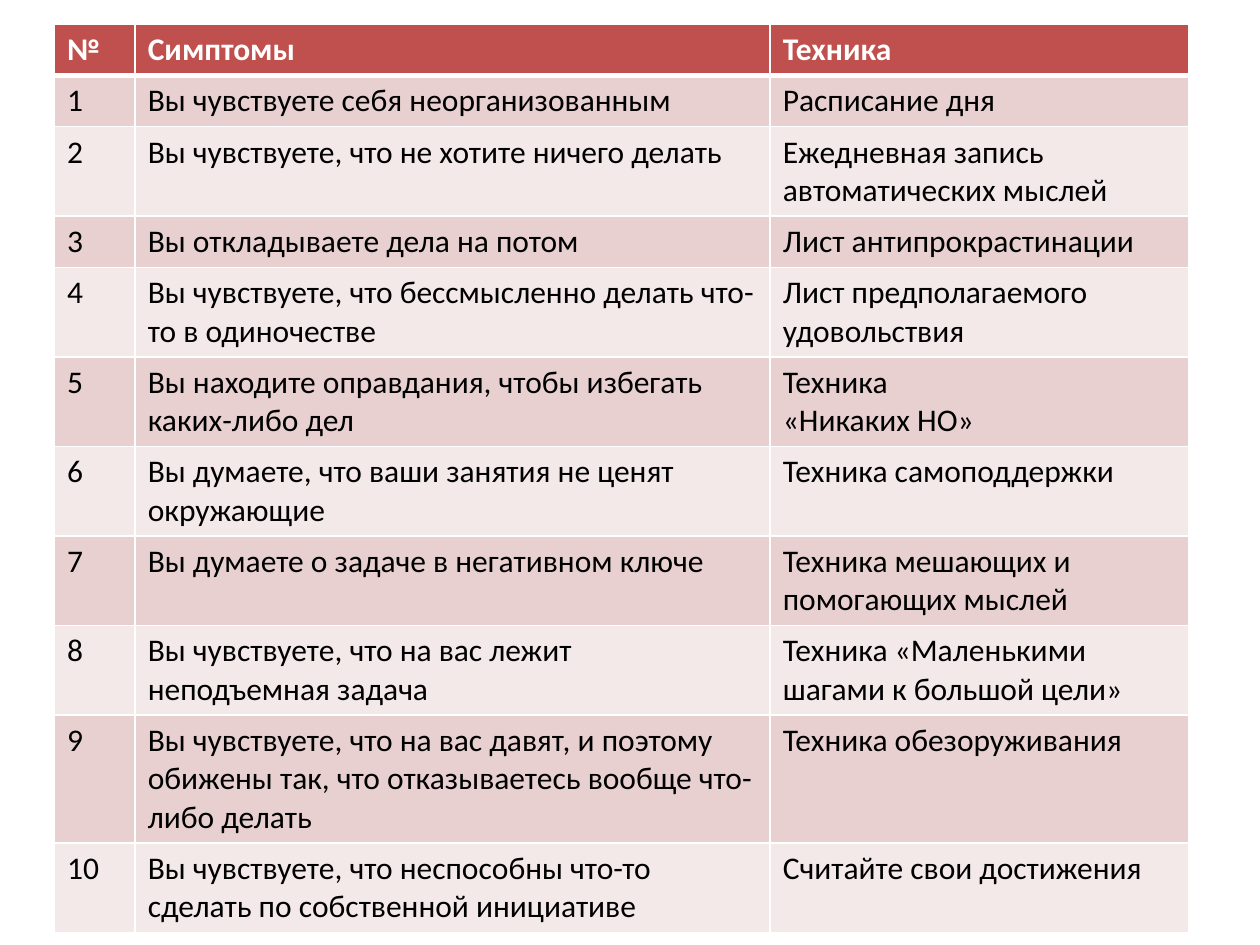
from lxml import etree
from pptx import Presentation
from pptx.dml.color import RGBColor
from pptx.oxml.ns import qn
from pptx.util import Pt

FONT = "Calibri"
FONT_SIZE = 18
WHITE, BLACK = "FFFFFF", "000000"
HEADER_FILL = "C0504D"
BAND_FILLS = ("F4E9E9", "E8D0D0")  # even rows, odd rows
THIN, THICK = 1, 3
COLUMN_WIDTHS = (46.08, 362.88, 239.04)
ROW_HEIGHT = 29.2

HEADINGS = ("№", "Симптомы", "Техника")
SYMPTOMS = [
    ("Вы чувствуете себя неорганизованным", "Расписание дня"),
    ("Вы чувствуете, что не хотите ничего делать",
     "Ежедневная запись автоматических мыслей"),
    ("Вы откладываете дела на потом", "Лист антипрокрастинации"),
    ("Вы чувствуете, что бессмысленно делать что-то в одиночестве",
     "Лист предполагаемого удовольствия"),
    ("Вы находите оправдания, чтобы избегать каких-либо дел",
     "Техника\n«Никаких НО»"),
    ("Вы думаете, что ваши занятия не ценят окружающие",
     "Техника самоподдержки"),
    ("Вы думаете о задаче в негативном ключе",
     "Техника мешающих и помогающих мыслей"),
    ("Вы чувствуете, что на вас лежит неподъемная задача",
     "Техника «Маленькими шагами к большой цели»"),
    ("Вы чувствуете, что на вас давят, и поэтому обижены так, "
     "что отказываетесь вообще что-либо делать",
     "Техника обезоруживания"),
    ("Вы чувствуете, что неспособны что-то сделать по собственной инициативе",
     "Считайте свои достижения"),
]


def color(hex_value):
    return RGBColor.from_string(hex_value)


def add_borders(cell, top, bottom):
    properties = cell._tc.get_or_add_tcPr()
    for side, width in (("L", THIN), ("R", THIN), ("T", top), ("B", bottom)):
        line = etree.SubElement(properties, qn(f"a:ln{side}"), w=str(Pt(width)))
        fill = etree.SubElement(line, qn("a:solidFill"))
        etree.SubElement(fill, qn("a:srgbClr"), val=WHITE)


def format_cell(cell, text, row_number):
    is_header = row_number == 0
    # Borders go before the fill in the cell properties
    add_borders(cell,
                top=THICK if row_number == 1 else THIN,
                bottom=THICK if is_header else THIN)
    cell.fill.solid()
    cell.fill.fore_color.rgb = color(
        HEADER_FILL if is_header else BAND_FILLS[row_number % 2])

    cell.text_frame.text = text
    for paragraph in cell.text_frame.paragraphs:
        for run in paragraph.runs:
            run.font.name = FONT
            run.font.size = Pt(FONT_SIZE)
            run.font.bold = is_header
            run.font.color.rgb = color(WHITE if is_header else BLACK)


def add_technique_table(slide, left, top, width, height):
    rows = [HEADINGS] + [(str(number), symptom, technique)
                         for number, (symptom, technique) in enumerate(SYMPTOMS, 1)]
    frame = slide.shapes.add_table(len(rows), len(HEADINGS),
                                   Pt(left), Pt(top), Pt(width), Pt(height))
    table = frame.table
    for column, column_width in zip(table.columns, COLUMN_WIDTHS):
        column.width = Pt(column_width)
    for row_number, texts in enumerate(rows):
        table.rows[row_number].height = Pt(ROW_HEIGHT)
        for column_number, text in enumerate(texts):
            format_cell(table.cell(row_number, column_number), text, row_number)
    # Rows grow with their text to fill this height
    frame.height = Pt(height)


def main():
    presentation = Presentation()
    presentation.slide_width, presentation.slide_height = Pt(720), Pt(540)
    blank_layout = presentation.slide_layouts[6]
    slide = presentation.slides.add_slide(blank_layout)
    add_technique_table(slide, left=31.2, top=14, width=648, height=512.6)
    presentation.save("out.pptx")


if __name__ == "__main__":
    main()
